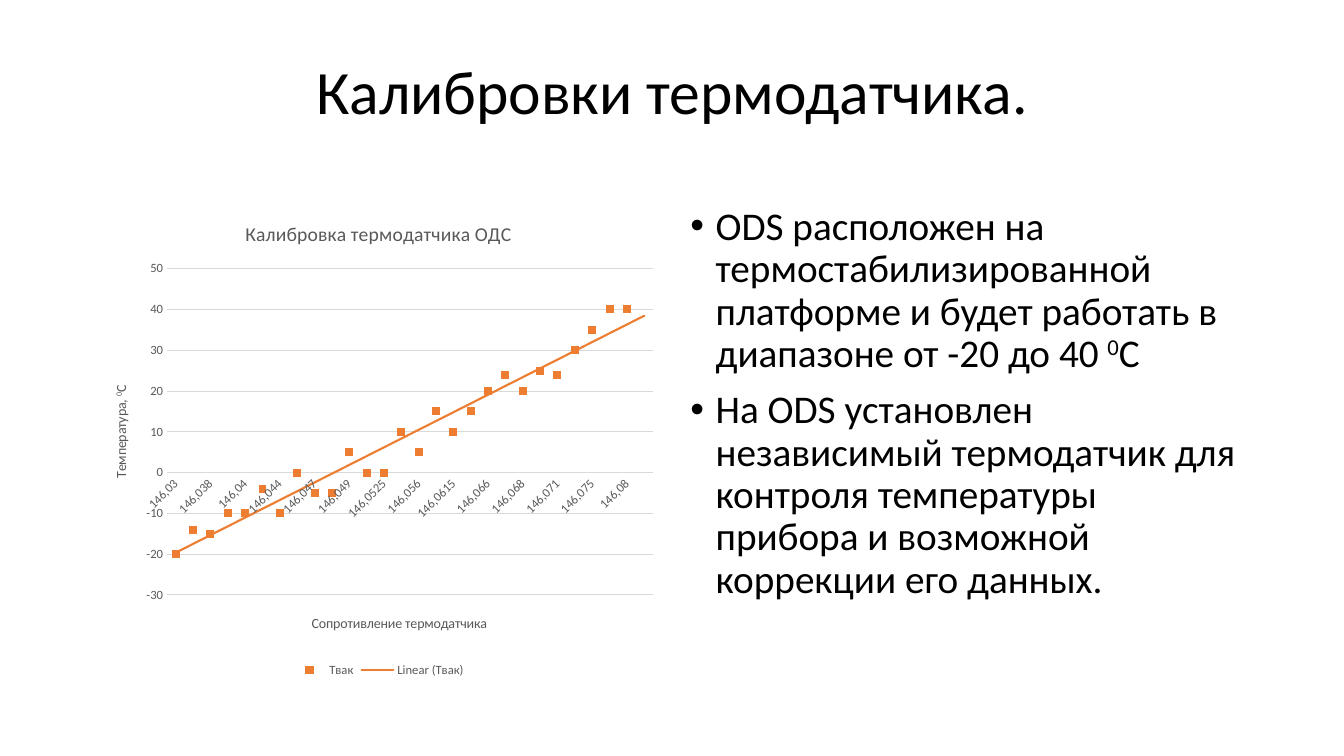
from lxml.etree import SubElement
from pptx import Presentation
from pptx.chart.data import CategoryChartData
from pptx.dml.color import RGBColor
from pptx.enum.chart import XL_CHART_TYPE as ChartType
from pptx.enum.chart import XL_LEGEND_POSITION as LegendPosition
from pptx.enum.chart import XL_MARKER_STYLE as MarkerStyle
from pptx.enum.chart import XL_TICK_MARK as TickMark
from pptx.enum.text import MSO_ANCHOR, PP_ALIGN
from pptx.oxml import parse_xml
from pptx.oxml.ns import nsdecls, qn
from pptx.util import Inches, Pt

FONT = "Calibri"
BLACK = RGBColor(0x00, 0x00, 0x00)
GRAY = RGBColor(0x59, 0x59, 0x59)
LIGHT_GRAY = RGBColor(0xD9, 0xD9, 0xD9)
ORANGE = RGBColor(0xED, 0x7D, 0x31)

# Each text is a list of runs: (words, is superscript)
TITLE = [("Калибровки термодатчика.", False)]
BULLETS = [
    [("ODS расположен на термостабилизированной платформе и будет работать "
      "в диапазоне от -20 до 40 ", False), ("0", True), ("С", False)],
    [("На ODS установлен независимый термодатчик для контроля температуры "
      "прибора и возможной коррекции его данных.", False)],
]
CHART_TITLE = [("Калибровка термодатчика ОДС", False)]
RESISTANCE_TITLE = [("Сопротивление термодатчика", False)]
TEMPERATURE_TITLE = [("Температура, ", False), ("0", True), ("С", False)]
SERIES_NAME = "Твак"
READINGS = [
    ("146,03", -20), ("146,031", -14), ("146,038", -15), ("146,039", -10),
    ("146,04", -10), ("146,043", -4), ("146,044", -10), ("146,044", 0),
    ("146,047", -5), ("146,048", -5), ("146,049", 5), ("146,052", 0),
    ("146,0525", 0), ("146,054", 10), ("146,056", 5), ("146,058", 15),
    ("146,0615", 10), ("146,062", 15), ("146,066", 20), ("146,0665", 24),
    ("146,068", 20), ("146,069", 25), ("146,071", 24), ("146,071", 30),
    ("146,075", 35), ("146,079", 40), ("146,08", 40), ("146,082", None),
]

MARGIN, CONTENT_TOP = 0.92, 2
COLUMN_WIDTH, COLUMN_HEIGHT = 5.67, 4.76
RIGHT_COLUMN = 6.75
PLOT_AREA = {"x": 0.13, "y": 0.14, "w": 0.85, "h": 0.68}


def style_font(font, size, color):
    font.name = FONT
    font.size = Pt(size)
    font.bold = False
    font.color.rgb = color


def add_runs(paragraph, runs, size, color):
    for words, superscript in runs:
        run = paragraph.add_run()
        run.text = words
        style_font(run.font, size, color)
        if superscript:
            run.font._element.set("baseline", "30000")


def add_bullets(slide):
    box = slide.shapes.add_textbox(Inches(RIGHT_COLUMN), Inches(CONTENT_TOP),
                                   Inches(COLUMN_WIDTH), Inches(COLUMN_HEIGHT))
    frame = box.text_frame
    frame.word_wrap = True
    for index, runs in enumerate(BULLETS):
        paragraph = frame.add_paragraph() if index else frame.paragraphs[0]
        paragraph.line_spacing = 0.9
        paragraph.space_before = Pt(10)
        properties = paragraph._p.get_or_add_pPr()
        properties.set("marL", str(Inches(0.25)))
        properties.set("indent", str(-Inches(0.25)))
        SubElement(properties, qn("a:buFont"), typeface="Arial")
        SubElement(properties, qn("a:buChar"), char="•")
        add_runs(paragraph, runs, 28, BLACK)


def style_axis(axis, title):
    axis.major_tick_mark = axis.minor_tick_mark = TickMark.NONE
    style_font(axis.tick_labels.font, 9, GRAY)
    add_runs(axis.axis_title.text_frame.paragraphs[0], title, 10, GRAY)


def style_line(line, color):
    line.color.rgb = color
    line.width = Pt(0.75)


def add_trendline(series):
    trendline = parse_xml(
        f'<c:trendline {nsdecls("c", "a")}><c:spPr><a:ln w="{Pt(1.5)}" cap="rnd">'
        f'<a:solidFill><a:srgbClr val="{ORANGE}"/></a:solidFill></a:ln></c:spPr>'
        '<c:trendlineType val="linear"/><c:dispRSqr val="0"/><c:dispEq val="0"/>'
        '</c:trendline>')
    series._element.find(qn("c:cat")).addprevious(trendline)


def place_plot_area(chart):
    plot_area = chart._chartSpace.chart.plotArea
    for old_layout in plot_area.findall(qn("c:layout")):
        plot_area.remove(old_layout)
    settings = {"layoutTarget": "inner", "xMode": "edge", "yMode": "edge", **PLOT_AREA}
    items = "".join(f'<c:{key} val="{value}"/>' for key, value in settings.items())
    plot_area.insert(0, parse_xml(
        f'<c:layout {nsdecls("c")}><c:manualLayout>{items}</c:manualLayout></c:layout>'))


def add_calibration_chart(slide):
    data = CategoryChartData()
    data.categories = [resistance for resistance, _ in READINGS]
    data.add_series(SERIES_NAME, [temperature for _, temperature in READINGS])
    chart = slide.shapes.add_chart(
        ChartType.LINE_MARKERS, Inches(MARGIN), Inches(CONTENT_TOP),
        Inches(COLUMN_WIDTH), Inches(COLUMN_HEIGHT), data).chart
    style_font(chart.font, 10, BLACK)
    add_runs(chart.chart_title.text_frame.paragraphs[0], CHART_TITLE, 14, GRAY)
    chart.chart_title.include_in_layout = False

    chart.has_legend = True
    chart.legend.position = LegendPosition.BOTTOM
    chart.legend.include_in_layout = False
    style_font(chart.legend.font, 9, GRAY)

    resistance_axis, temperature_axis = chart.category_axis, chart.value_axis
    style_axis(resistance_axis, RESISTANCE_TITLE)
    style_line(resistance_axis.format.line, LIGHT_GRAY)
    style_axis(temperature_axis, TEMPERATURE_TITLE)
    temperature_axis.format.line.fill.background()
    temperature_axis.minimum_scale, temperature_axis.maximum_scale = -30, 50
    temperature_axis.major_unit = 10
    style_line(temperature_axis.major_gridlines.format.line, LIGHT_GRAY)

    chart.plots[0].vary_by_categories = False
    series = chart.plots[0].series[0]
    series.smooth = False
    series.format.line.fill.background()
    series.marker.style = MarkerStyle.SQUARE
    series.marker.size = 5
    series.marker.format.fill.solid()
    series.marker.format.fill.fore_color.rgb = ORANGE
    style_line(series.marker.format.line, ORANGE)
    add_trendline(series)
    place_plot_area(chart)


def main():
    presentation = Presentation()
    presentation.slide_width, presentation.slide_height = Inches(13.33), Inches(7.5)
    slide = presentation.slides.add_slide(presentation.slide_layouts[5])

    title = slide.shapes.title
    title.left, title.top = Inches(MARGIN), Inches(0.4)
    title.width, title.height = Inches(11.5), Inches(1.07)
    title.text_frame.vertical_anchor = MSO_ANCHOR.MIDDLE
    heading = title.text_frame.paragraphs[0]
    heading.alignment = PP_ALIGN.CENTER
    heading.line_spacing = 0.9
    add_runs(heading, TITLE, 44, BLACK)

    add_calibration_chart(slide)
    add_bullets(slide)
    presentation.save("out.pptx")


if __name__ == "__main__":
    main()
